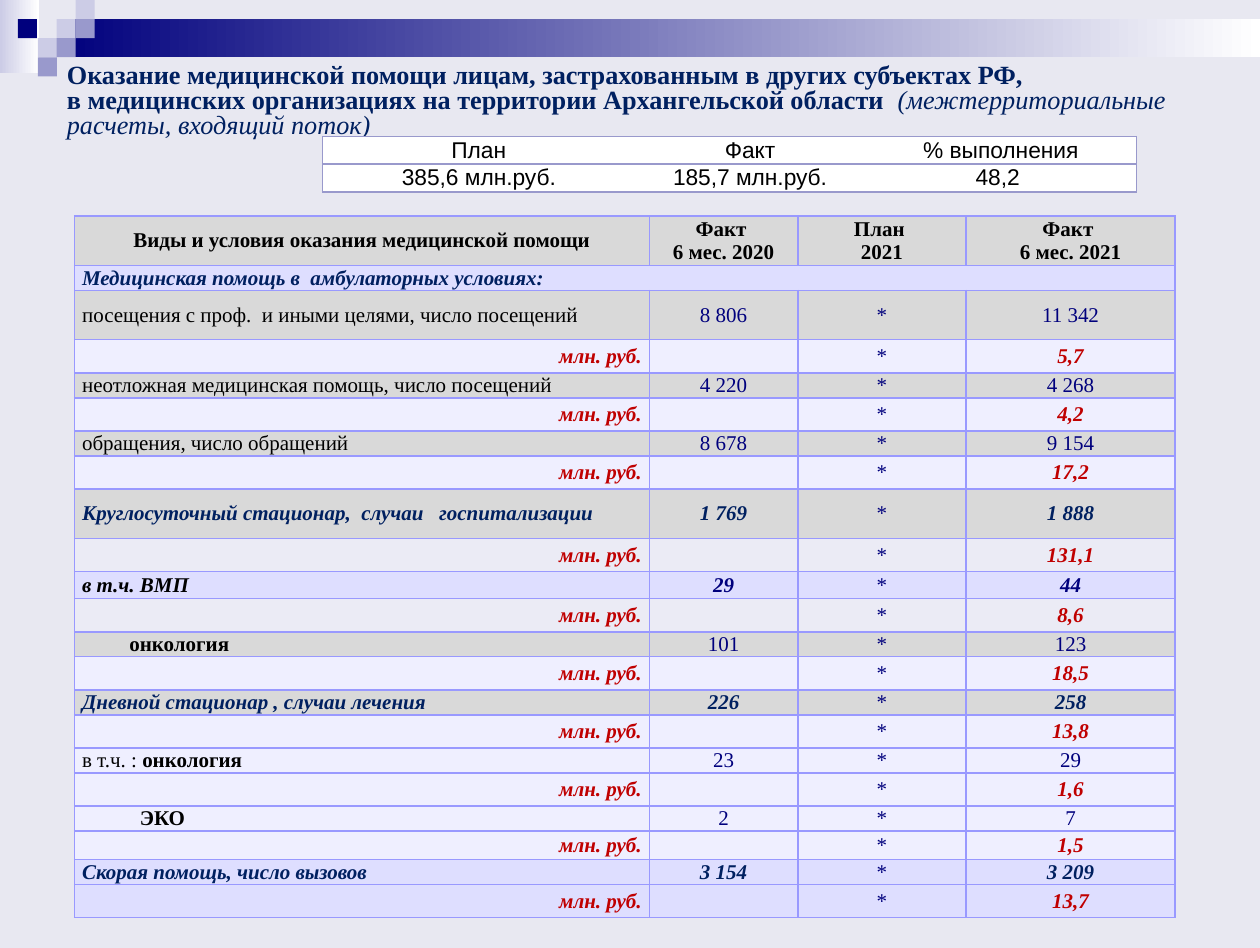
from dataclasses import dataclass
from lxml import etree
from pptx import Presentation
from pptx.dml.color import RGBColor
from pptx.enum import shapes, text
from pptx.oxml import ns
from pptx.util import Pt

NAVY = RGBColor(0x00, 0x00, 0x7D)
INK = RGBColor(0x00, 0x20, 0x60)
RED = RGBColor(0xC0, 0x00, 0x00)
BLACK = RGBColor(0x00, 0x00, 0x00)
WHITE = RGBColor(0xFF, 0xFF, 0xFF)
GREY = RGBColor(0xD9, 0xD9, 0xD9)
PALE = RGBColor(0xEF, 0xEF, 0xFF)
MIST = RGBColor(0xEB, 0xEB, 0xF5)
LILAC = RGBColor(0xDE, 0xDE, 0xFF)
EDGE = RGBColor(0x99, 0x99, 0xFF)
DUSK = RGBColor(0x99, 0x99, 0xCC)
HAZE = RGBColor(0xCC, 0xCC, 0xE6)
BACK = RGBColor(0xE8, 0xE8, 0xF1)

SERIF, SANS = "Times New Roman", "Arial"
LEFT, MID, RIGHT = (text.PP_ALIGN.LEFT, text.PP_ALIGN.CENTER,
                    text.PP_ALIGN.RIGHT)


@dataclass(frozen=True)
class Face:
    color: RGBColor
    bold: bool = False
    ital: bool = False
    size: float = 12
    font: str = SERIF


@dataclass(frozen=True)
class Box:
    x: float
    y: float
    w: float
    h: float
    fill: RGBColor
    fade: bool = False


@dataclass(frozen=True)
class Item:
    label: tuple
    past: str
    now: str
    cost: str
    face: Face
    fill: RGBColor
    under: RGBColor = PALE
    high: float = 14.2
    low: float = 19
    indent: float = 0


HEAD = Face(BLACK, True)
PLAIN = Face(BLACK)
NUM = Face(NAVY)
KEY = Face(INK, True, True)
COST = Face(RED, True, True)
SUM = Face(BLACK, size=13, font=SANS)

UNIT = 10.9
BOXES = [
    Box(0, 0, 22.3, 41.8, HAZE, True),
    Box(32.4, UNIT, 687.6, 2 * UNIT, NAVY, True),
    Box(32.4, UNIT, UNIT, UNIT, HAZE),
    Box(43.2, 0, UNIT, UNIT, HAZE),
    Box(43.2, UNIT, UNIT, UNIT, DUSK),
    Box(21.6, 2 * UNIT, UNIT, UNIT, HAZE),
    Box(10.2, UNIT, UNIT, UNIT, NAVY),
    Box(32.4, 2 * UNIT, UNIT, UNIT, DUSK),
    Box(21.6, 3 * UNIT, UNIT, UNIT, DUSK),
]

ITEMS = [
    Item((("посещения с проф.  и иными целями, число посещений", PLAIN),),
         "8 806", "11 342", "5,7", NUM, GREY, high=28.2),
    Item((("неотложная медицинская помощь, число посещений", PLAIN),),
         "4 220", "4 268", "4,2", NUM, GREY),
    Item((("обращения, число обращений", PLAIN),),
         "8 678", "9 154", "17,2", NUM, GREY),
    Item((("Круглосуточный стационар,  случаи   госпитализации", KEY),),
         "1 769", "1 888", "131,1", KEY, GREY, MIST, high=28.2),
    Item((("в т.ч. ВМП", Face(BLACK, True, True)),),
         "29", "44", "8,6", Face(NAVY, True, True), LILAC, MIST, high=15.4),
    Item((("онкология", HEAD),), "101", "123", "18,5", NUM, GREY, indent=27),
    Item((("Дневной стационар , случаи лечения", KEY),),
         "226", "258", "13,8", KEY, GREY),
    Item((("в т.ч. : ", PLAIN), ("онкология", HEAD)),
         "23", "29", "1,6", NUM, PALE),
    Item((("ЭКО", HEAD),), "2", "7", "1,5", NUM, PALE, low=16.4, indent=33),
    Item((("Скорая помощь, число вызовов", KEY),),
         "3 154", "3 209", "13,7", KEY, LILAC, LILAC),
]


def write(par, words: str, face: Face) -> None:
    for i, line in enumerate(words.split("\n")):
        if i:
            par.add_line_break()
        run = par.add_run()
        run.text = line
        font = run.font
        font.name, font.size = face.font, Pt(face.size)
        font.bold, font.italic = face.bold, face.ital
        font.color.rgb = face.color


def draw(slide, box: Box) -> None:
    shape = slide.shapes.add_shape(shapes.MSO_SHAPE.RECTANGLE, Pt(box.x),
                                   Pt(box.y), Pt(box.w), Pt(box.h))
    shape.shadow.inherit = False
    shape.line.fill.background()
    if box.fade:
        shape.fill.gradient()
        shape.fill.gradient_angle = 0
        for stop, color in zip(shape.fill.gradient_stops, (box.fill, WHITE)):
            stop.color.rgb = color
    else:
        shape.fill.solid()
        shape.fill.fore_color.rgb = box.fill


def border(cell, sides: str, color: RGBColor) -> None:
    props = cell._tc.get_or_add_tcPr()
    for side in "LRTB":
        line = etree.SubElement(props, ns.qn(f"a:ln{side}"), w=str(Pt(1)))
        if side in sides:
            solid = etree.SubElement(line, ns.qn("a:solidFill"))
            etree.SubElement(solid, ns.qn("a:srgbClr"), val=str(color))
        else:
            etree.SubElement(line, ns.qn("a:noFill"))


def fill(cell, parts: tuple, align, back: RGBColor, sides: str,
         edge: RGBColor, indent: float = 0) -> None:
    cell.margin_left = cell.margin_right = Pt(4.32)
    cell.margin_top = cell.margin_bottom = 0
    cell.vertical_anchor = text.MSO_ANCHOR.MIDDLE
    border(cell, sides, edge)
    cell.fill.solid()
    cell.fill.fore_color.rgb = back
    par = cell.text_frame.paragraphs[0]
    par.alignment = align
    if indent:
        par._p.get_or_add_pPr().set("marL", str(Pt(indent)))
    for words, face in parts:
        write(par, words, face)
    if not parts:
        end = etree.SubElement(par._p, ns.qn("a:endParaRPr"))
        end.set("sz", "1200")


def grid(slide, x: float, y: float, cols: list, rows: list):
    frame = slide.shapes.add_table(len(rows), len(cols), Pt(x), Pt(y),
                                   Pt(sum(cols)), Pt(sum(rows)))
    table = frame.table
    table.first_row = table.horz_banding = False
    for col, wide in zip(table.columns, cols):
        col.width = Pt(wide)
    for row, high in zip(table.rows, rows):
        row.height = Pt(high)
    return table


def line(table, row: int, cells: list, back: RGBColor, first=LEFT,
         indent: float = 0) -> None:
    for col, parts in enumerate(cells):
        fill(table.cell(row, col), parts, MID if col else first, back,
             "LRTB", EDGE, 0 if col else indent)


def care(slide) -> None:
    rows = [28.2, 14.2] + [h for i in ITEMS for h in (i.high, i.low)]
    table = grid(slide, 42.6, 123.5, [328.4, 85, 96, 119.6], rows)
    heads = ["Виды и условия оказания медицинской помощи",
             "Факт \n6 мес. 2020", "План ", "Факт \n6 мес. 2021"]
    line(table, 0, [((words, HEAD),) for words in heads], GREY, MID)
    year = table.cell(0, 2).text_frame.add_paragraph()
    year.alignment = MID
    write(year, "2021", HEAD)
    part = (("Медицинская помощь в  амбулаторных условиях:", KEY),)
    line(table, 1, [part, (), (), ()], LILAC)
    table.cell(1, 0).merge(table.cell(1, 3))
    star = (("*", NUM),)
    for i, item in enumerate(ITEMS):
        row = 2 + 2 * i
        line(table, row, [item.label, ((item.past, item.face),), star,
                          ((item.now, item.face),)], item.fill,
             indent=item.indent)
        line(table, row + 1, [(("млн. руб.", COST),), (), star,
                              ((item.cost, COST),)], item.under, RIGHT)


def total(slide) -> None:
    table = grid(slide, 184.4, 78, [178.4, 131.6, 155], [15.8, 15.8])
    data = [["План", "Факт", "% выполнения"],
            ["385,6 млн.руб.", "185,7 млн.руб.", "48,2 "]]
    for r, words in enumerate(data):
        for c, (word, sides) in enumerate(zip(words, ("LTB", "TB", "RTB"))):
            fill(table.cell(r, c), ((word, SUM),), MID, WHITE, sides, DUSK)


def name(slide) -> None:
    title = slide.shapes.title
    title.left, title.top = Pt(31), Pt(32.6)
    title.width, title.height = Pt(700), Pt(51.1)
    frame = title.text_frame
    frame.word_wrap = True
    frame.auto_size = text.MSO_AUTO_SIZE.NONE
    frame.vertical_anchor = text.MSO_ANCHOR.MIDDLE
    par = frame.paragraphs[0]
    par.alignment, par.line_spacing = LEFT, 0.8
    write(par, "Оказание медицинской помощи лицам, застрахованным в других "
          "субъектах РФ, \nв медицинских организациях на территории "
          "Архангельской области  ", Face(INK, True, size=15))
    write(par, "(межтерриториальные расчеты, входящий поток)",
          Face(INK, ital=True, size=15))


def main() -> None:
    deck = Presentation()
    deck.slide_width, deck.slide_height = Pt(720), Pt(541.44)
    slide = deck.slides.add_slide(deck.slide_layouts[5])
    slide.background.fill.solid()
    slide.background.fill.fore_color.rgb = BACK
    for box in BOXES:
        draw(slide, box)
    name(slide)
    care(slide)
    total(slide)
    deck.save("out.pptx")


if __name__ == "__main__":
    main()
